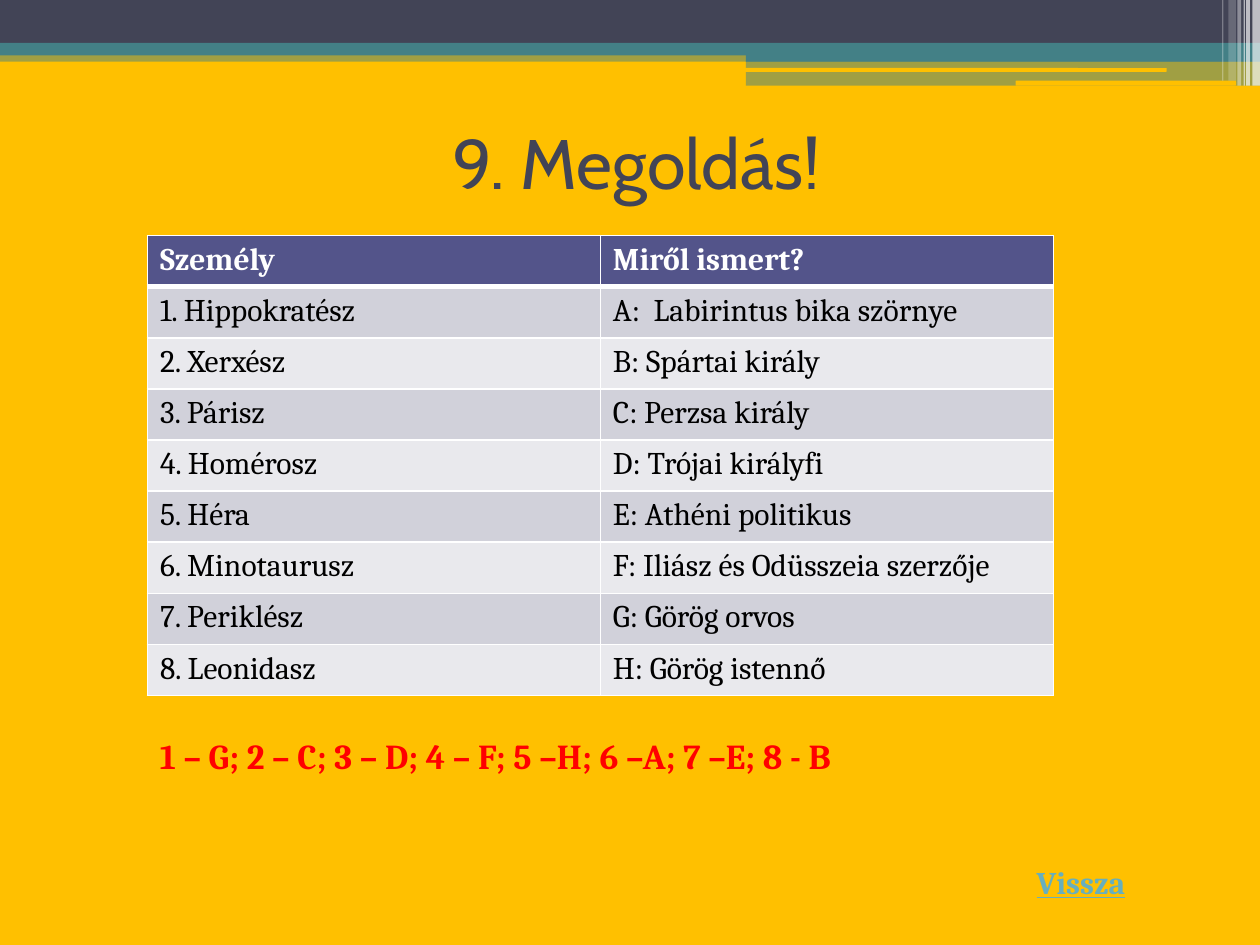
from lxml import etree
from pptx import Presentation
from pptx.dml.color import RGBColor
from pptx.enum.shapes import MSO_SHAPE
from pptx.enum.text import MSO_ANCHOR, MSO_AUTO_SIZE, PP_ALIGN
from pptx.oxml.ns import qn
from pptx.util import Inches, Pt

RECT = MSO_SHAPE.RECTANGLE
ROUND = MSO_SHAPE.ROUNDED_RECTANGLE
MIDDLE = MSO_ANCHOR.MIDDLE
CENTER = PP_ALIGN.CENTER
GROW = MSO_AUTO_SIZE.SHAPE_TO_FIT_TEXT

GOLD, NAVY, TEAL, WHITE = "FFC000", "424456", "438086", "FFFFFF"
HEADER, BANDS = "53548A", ("D1D1DA", "E9E9ED")

BARS = [
    (RECT, 0, 0.4, 10, 0.09, TEAL, 50),
    (RECT, 0, 0, 10, 0.34, NAVY, 100),
    (RECT, 0, 0.34, 10, 0.1, TEAL, 100),
    (RECT, 5.92, 0.39, 4.08, 0.1, TEAL, 100),
    (RECT, 5.92, 0.48, 4.08, 0.2, TEAL, 50),
    (ROUND, 5.91, 0.54, 3.35, 0.03, GOLD, 100),
    (ROUND, 8.06, 0.64, 1.75, 0.04, GOLD, 100),
]
STRIPES = [
    (9.94, 0.06, 0.68, 65),
    (9.89, 0.03, 0.68, 65),
    (9.87, 0.01, 0.68, 60),
    (9.82, 0.03, 0.68, 40),
    (9.75, 0.06, 0.64, 20),
    (9.7, 0.01, 0.64, 30),
]
ROWS = [
    ("Személy", "Miről ismert?"),
    ("1. Hippokratész", "A:  Labirintus bika szörnye"),
    ("2. Xerxész", "B: Spártai király"),
    ("3. Párisz", "C: Perzsa király"),
    ("4. Homérosz", "D: Trójai királyfi"),
    ("5. Héra", "E: Athéni politikus"),
    ("6. Minotaurusz", "F: Iliász és Odüsszeia szerzője"),
    ("7. Periklész", "G: Görög orvos"),
    ("8. Leonidasz", "H: Görög istennő"),
]
TITLE = "9. Megoldás!"
ANSWERS = "1 – G; 2 – C; 3 – D; 4 – F; 5 –H; 6 –A; 7 –E; 8 - B"
BACK = "Vissza"


def rgb(color):
    return RGBColor.from_string(color)


def paint(fill, color):
    fill.solid()
    fill.fore_color.rgb = rgb(color)


def add_bar(s, kind, x, y, w, h, color, opacity):
    sp = s.shapes.add_shape(kind, Inches(x), Inches(y), Inches(w), Inches(h))
    sp.shadow.inherit = False
    sp.line.fill.background()
    paint(sp.fill, color)
    if opacity < 100:
        clr = sp.fill._xPr.find(".//" + qn("a:srgbClr"))
        etree.SubElement(clr, qn("a:alpha")).set("val", str(opacity * 1000))


def set_text(tf, text, size, color, font="Cambria", bold=False):
    tf.text = text
    p = tf.paragraphs[0]
    f = p.runs[0].font
    f.name, f.size, f.bold = font, Pt(size), bold
    f.color.rgb = rgb(color)
    return p


def add_text(s, x, y, w, h, text, size, color, wrap=True, **style):
    tf = s.shapes.add_textbox(Inches(x), Inches(y), Inches(w), Inches(h)).text_frame
    tf.word_wrap = wrap
    return tf, set_text(tf, text, size, color, **style)


def set_borders(cell, bottom):
    tc_pr = cell._tc.get_or_add_tcPr()
    for i, (side, width) in enumerate((("L", 1), ("R", 1), ("T", 1), ("B", bottom))):
        ln = etree.Element(qn("a:ln" + side), w=str(Pt(width)))
        fill = etree.SubElement(ln, qn("a:solidFill"))
        etree.SubElement(fill, qn("a:srgbClr")).set("val", WHITE)
        tc_pr.insert(i, ln)


def add_people_table(s):
    table = s.shapes.add_table(len(ROWS), 2, Inches(1.17), Inches(1.87),
                               Inches(7.19), Inches(3.65)).table
    for i, row in enumerate(ROWS):
        head = i == 0
        for j, text in enumerate(row):
            cell = table.cell(i, j)
            paint(cell.fill, HEADER if head else BANDS[(i - 1) % 2])
            set_borders(cell, 3 if head else 1)
            p = set_text(cell.text_frame, text, 18, WHITE if head else "000000", bold=head)
            if not head:
                p_pr = p._p.get_or_add_pPr()
                p_pr.set("marL", str(Inches(0.38)))
                p_pr.set("indent", str(Inches(-0.38)))


def main():
    prs = Presentation()
    prs.slide_width, prs.slide_height = Inches(10), Inches(7.5)
    s = prs.slides.add_slide(prs.slide_layouts[6])
    paint(s.background.fill, GOLD)

    for bar in BARS:
        add_bar(s, *bar)
    for x, w, h, opacity in STRIPES:
        add_bar(s, RECT, x, 0, w, h, WHITE, opacity)

    tf, p = add_text(s, 0.55, 0.7, 9, 1.17, TITLE, 40, NAVY, font="Cabin")
    tf.vertical_anchor = MIDDLE
    p.alignment = CENTER

    tf, p = add_text(s, 8.13, 6.8, 1.03, 0.4, BACK, 18, "67AFBD", wrap=False, bold=True)
    tf.auto_size = GROW
    p.runs[0].font.underline = True

    add_people_table(s)

    tf, p = add_text(s, 1.17, 5.78, 7.03, 0.44, ANSWERS, 20, "FF0000", bold=True)
    tf.auto_size = GROW

    prs.save("out.pptx")


if __name__ == "__main__":
    main()
